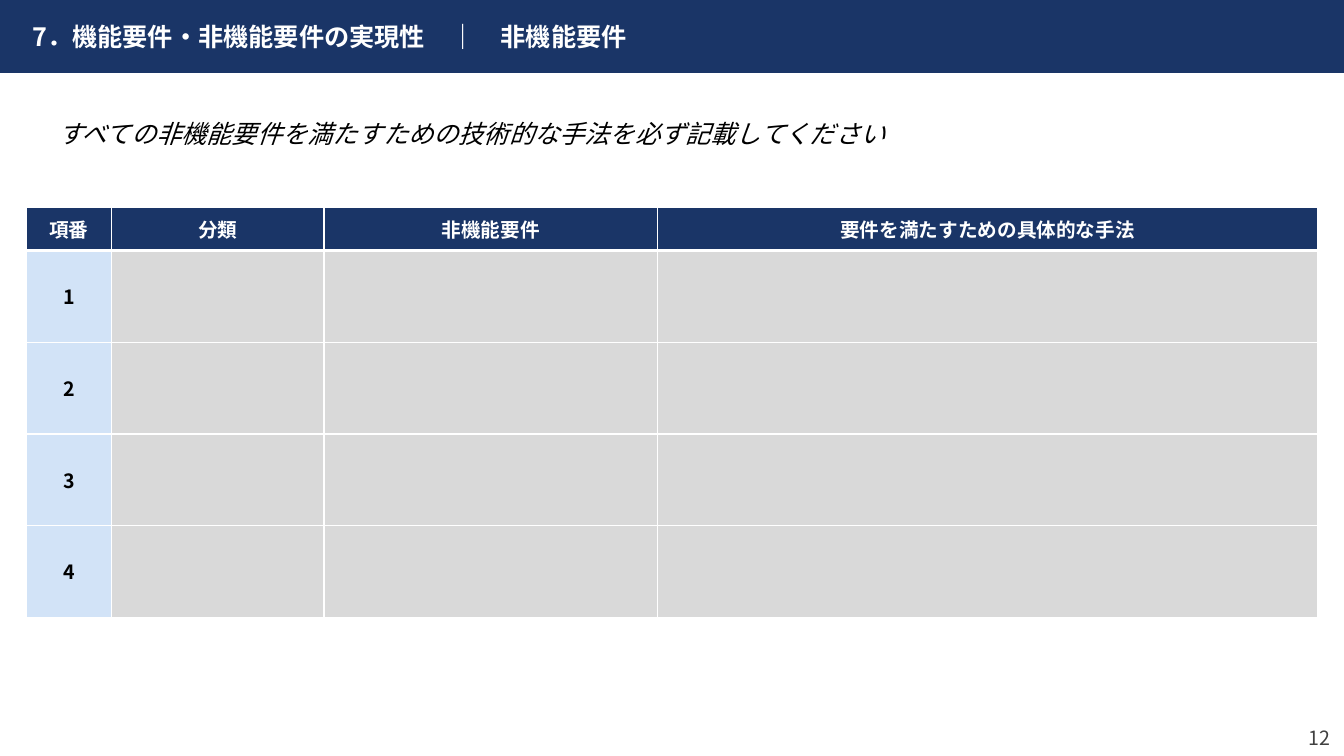
from dataclasses import dataclass

from lxml import etree
from pptx import Presentation
from pptx.dml.color import RGBColor
from pptx.enum import shapes, text
from pptx.oxml import ns
from pptx.util import Pt

FACE = "Noto Sans CJK JP"
NAVY, WHITE, BLACK = "1A3567", "FFFFFF", "000000"
BLUE, GREY, DARK = "D2E3F7", "D9D9D9", "404040"
LEFT, MID, RIGHT = text.PP_ALIGN.LEFT, text.PP_ALIGN.CENTER, text.PP_ALIGN.RIGHT


@dataclass
class Column:
    head: str
    width: float
    fill: str


COLUMNS = [
    Column("項番", 60.5, BLUE),
    Column("分類", 152, GREY),
    Column("非機能要件", 238.3, GREY),
    Column("要件を満たすための具体的な手法", 471.6, GREY),
]
ROWS = 4
HEAD_H, ROW_H = 31, 65.5


def paint(target, color: str) -> None:
    """Give a fill one solid colour."""
    target.solid()
    target.fore_color.rgb = RGBColor.from_string(color)


def place(shape, left: float, top: float, width: float, height: float) -> None:
    box = dict(left=left, top=top, width=width, height=height)
    for name, value in box.items():
        setattr(shape, name, Pt(value))


def write(frame, words: str, size: float, color: str, align=LEFT, **style) -> None:
    """Put one formatted paragraph in a text frame."""
    para = frame.paragraphs[0]
    para.alignment = align
    run = para.add_run()
    run.text = words
    look = dict(name=FACE, size=Pt(size), **style)
    for name, value in look.items():
        setattr(run.font, name, value)
    paint(run.font.fill, color)
    east = etree.SubElement(run.font._element, ns.qn("a:ea"))
    east.set("typeface", FACE)


def center(frame) -> None:
    """Remove the insets and anchor the text in the middle."""
    look = dict(margin_left=0, margin_right=0, margin_top=0, margin_bottom=0,
                word_wrap=True, auto_size=text.MSO_AUTO_SIZE.NONE,
                vertical_anchor=text.MSO_ANCHOR.MIDDLE)
    for name, value in look.items():
        setattr(frame, name, value)


def edge(cell, **widths: float) -> None:
    """Draw white borders, given by side in the order L, R, T, B."""
    props = cell._tc.get_or_add_tcPr()
    for spot, (side, width) in enumerate(widths.items()):
        line = etree.Element(ns.qn(f"a:ln{side}"), w=str(Pt(width)))
        solid = etree.SubElement(line, ns.qn("a:solidFill"))
        etree.SubElement(solid, ns.qn("a:srgbClr"), val=WHITE)
        props.insert(spot, line)


def add_band(slide) -> None:
    band = slide.shapes.add_shape(shapes.MSO_SHAPE.RECTANGLE, 0, 0, Pt(960), Pt(52))
    band.shadow.inherit = False
    paint(band.fill, NAVY)
    paint(band.line.fill, NAVY)
    band.line.width = Pt(1)
    slide.shapes._spTree.insert(2, band._element)

    title = slide.shapes.title
    place(title, 23, 0, 684, 52)
    center(title.text_frame)
    write(title.text_frame, "7．機能要件・非機能要件の実現性　｜　非機能要件",
          18, WHITE, bold=True)


def add_note(slide) -> None:
    note = slide.shapes.add_textbox(Pt(34.5), Pt(70), Pt(890.5), Pt(103)).text_frame
    note.word_wrap = True
    note.paragraphs[0].line_spacing = 1.5
    write(note, "すべての非機能要件を満たすための技術的な手法を必ず記載してください",
          18, BLACK, italic=True)


def add_grid(slide) -> None:
    width = sum(col.width for col in COLUMNS)
    grid = slide.shapes.add_table(ROWS + 1, len(COLUMNS), Pt(19), Pt(148),
                                  Pt(width), Pt(HEAD_H + ROWS * ROW_H)).table
    for r, row in enumerate(grid.rows):
        row.height = Pt(ROW_H if r else HEAD_H)
        for c, col in enumerate(COLUMNS):
            grid.columns[c].width = Pt(col.width)
            cell = grid.cell(r, c)
            cell.vertical_anchor = text.MSO_ANCHOR.MIDDLE
            paint(cell.fill, col.fill if r else NAVY)
            edge(cell, L=1, R=1, T=3 if r == 1 else 1, B=1 if r else 3)
            if r == 0:
                write(cell.text_frame, col.head, 14, WHITE, MID, bold=True)
            elif c == 0:
                write(cell.text_frame, str(r), 14, BLACK, MID, bold=True)


def add_page(slide) -> None:
    page = slide.shapes.add_textbox(Pt(906), Pt(514), Pt(44.5), Pt(26)).text_frame
    center(page)
    write(page, "12", 14, DARK, RIGHT)


def main() -> None:
    deck = Presentation()
    deck.slide_width, deck.slide_height = Pt(960), Pt(540)
    slide = deck.slides.add_slide(deck.slide_layouts[5])
    for add in (add_band, add_note, add_grid, add_page):
        add(slide)
    deck.save("out.pptx")


if __name__ == "__main__":
    main()
